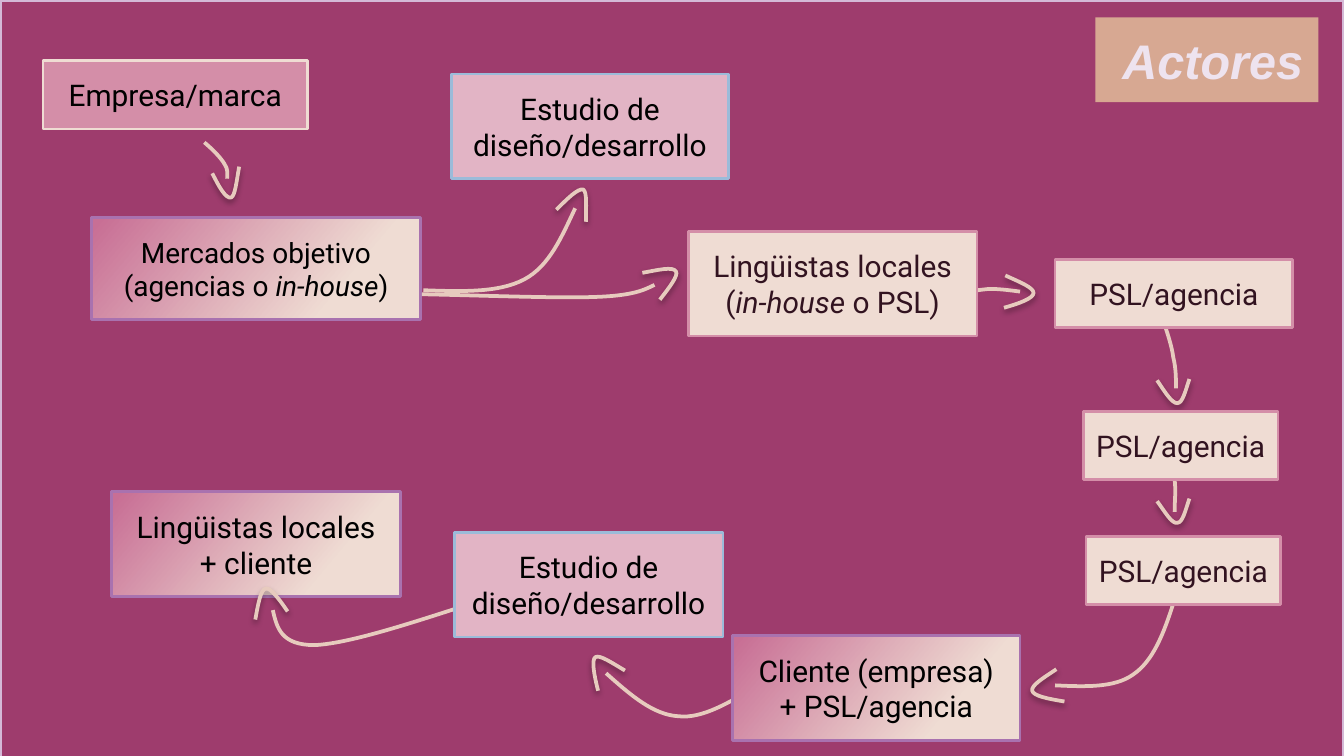
from copy import deepcopy

from lxml import etree
from pptx import Presentation
from pptx.dml.color import RGBColor
from pptx.enum.shapes import MSO_SHAPE
from pptx.enum.text import MSO_ANCHOR, MSO_AUTO_SIZE, PP_ALIGN
from pptx.oxml.ns import qn
from pptx.util import Pt

RECT = MSO_SHAPE.RECTANGLE
MIDDLE = MSO_ANCHOR.MIDDLE
GROW = MSO_AUTO_SIZE.SHAPE_TO_FIT_TEXT
CENTER = PP_ALIGN.CENTER
PX = 9144  # 100 px to the inch


class Theme:
    backdrop, panel, panel_line = "5A2337", "9E3C6D", "D4B9D7"
    arrow, shadow = "E7CBBE", "000000"
    badge, badge_text = "D7A892", "EEE3EF"
    body_font, badge_font = "Roboto", "Arial"
    body, small, badge_size = 16, 15, 26
    box_line, thick_line = 1.5, 2
    # kind: (fill, line, text); a pair of fill colours is a gradient
    boxes = {
        "brand": ("D48EA8", "EFDCD3", "000000"),
        "client": (("EFDCD3", "C86F95"), "A972AF", "000000"),
        "studio": ("E2B4C5", "9BBBD9", "000000"),
        "vendor": ("EFDCD3", "D48EA8", "321320"),
    }


# Boxes: kind, (left, top, width, height), side inset, wrap, size, paragraphs of runs
# "\n" is a line break; a run in a tuple is italic
BACK_BOXES = [
    ("client", (68, 162, 245, 76), 6, True, Theme.small,
     [["Mercados objetivo"], ["(agencias o ", ("in-house",), ")"]]),
    ("studio", (336, 55, 206, 78), 6, True, Theme.body,
     [["Estudio de diseño/desarrollo"]]),
    ("client", (83, 366, 215, 78), 12, False, Theme.body,
     [["Lingüistas locales"], ["+ cliente"]]),
]
FRONT_BOXES = [
    ("client", (545, 473, 214, 78), 12, False, Theme.body,
     [["Cliente (empresa)", "\n", "+ PSL/agencia"]]),
    ("studio", (338, 396, 200, 78), 6, False, Theme.body,
     [["Estudio de", "\n", "diseño/desarrollo"]]),
    ("brand", (32, 45, 197, 51), 6, True, Theme.body, [["Empresa/marca"]]),
    ("vendor", (512, 172, 215, 78), 12, True, Theme.body,
     [["Lingüistas locales", "\n", "(", ("in-house",), " o PSL)"]]),
    ("vendor", (785, 193, 177, 51), 6, True, Theme.body, [["PSL/agencia"]]),
    ("vendor", (806, 306, 145, 51), 6, False, Theme.body, [["PSL/agencia"]]),
    ("vendor", (808, 399, 145, 51), 6, False, Theme.body, [["PSL/agencia"]]),
]

# Curves: a start point, then three points for each Bézier segment
HEADS = [
    [(445, 514), (442, 502), (440, 491), (443, 489), (446, 487), (455, 493), (465, 499)],
    [(885, 282), (882, 291), (880, 300), (876, 300), (872, 300), (867, 292), (861, 283)],
    [(748, 205), (759, 210), (769, 214), (769, 218), (769, 222), (758, 226), (747, 229)],
    [(414, 156), (422, 148), (430, 140), (434, 141), (437, 143), (436, 154), (436, 165)],
    [(478, 203), (489, 201), (501, 198), (503, 202), (505, 205), (498, 214), (491, 223)],
    [(190, 461), (192, 450), (194, 438), (198, 438), (201, 437), (208, 446), (214, 455)],
    [(178, 124), (176, 135), (175, 146), (172, 147), (168, 148), (163, 139), (158, 129)],
    [(885, 371), (882, 380), (880, 389), (876, 389), (872, 390), (867, 381), (861, 373)],
    [(792, 522), (780, 520), (769, 518), (768, 514), (767, 510), (777, 504), (786, 498)],
]
SHAFTS = [
    [(315, 216), (343, 217), (371, 218), (390, 208), (409, 198), (418, 176), (428, 155)],
    [(314, 219), (364, 220), (414, 222), (443, 221), (471, 220), (479, 216), (487, 212)],
    [(203, 454), (206, 467), (209, 480), (234, 480), (259, 479), (305, 464), (351, 449)],
    [(785, 510), (807, 511), (829, 512), (843, 502), (858, 492), (866, 471), (873, 449)],
    [(451, 501), (469, 517), (486, 532), (505, 533), (523, 535), (544, 522), (564, 510)],
    [(152, 106), (158, 111), (164, 117), (167, 122), (170, 126), (169, 130), (169, 133)],
    [(709, 219), (718, 217), (727, 216), (736, 215), (744, 215), (751, 216), (759, 217)],
    [(866, 240), (869, 249), (872, 258), (873, 266), (875, 274), (875, 282), (875, 289)],
    [(870, 331), (872, 340), (873, 349), (874, 357), (875, 365), (874, 373), (874, 381)],
]


def rgb(value):
    return RGBColor.from_string(value)


def add_rect(slide, at, fill, line=None, width=Theme.box_line):
    sp = slide.shapes.add_shape(RECT, *(v * PX for v in at))
    sp.shadow.inherit = False
    if isinstance(fill, tuple):
        sp.fill.gradient()
        sp.fill.gradient_angle = 140
        for stop, color, pos in zip(sp.fill.gradient_stops, fill, (0.25, 0.98)):
            stop.color.rgb, stop.position = rgb(color), pos
    else:
        sp.fill.solid()
        sp.fill.fore_color.rgb = rgb(fill)
    if line:
        sp.line.color.rgb = rgb(line)
        sp.line.width = Pt(width)
    else:
        sp.line.fill.background()
    return sp


def set_insets(tf, side, end):
    tf.margin_left = tf.margin_right = side * PX
    tf.margin_top = tf.margin_bottom = end * PX
    tf.vertical_anchor = MIDDLE


def add_run(p, text, font, size, color, italic=False, bold=False):
    r = p.add_run()
    r.text = text
    r.font.name, r.font.size = font, Pt(size)
    r.font.color.rgb = rgb(color)
    r.font.italic, r.font.bold = italic, bold
    return r


def add_box(slide, kind, at, inset, wrap, size, paragraphs):
    fill, line, color = Theme.boxes[kind]
    tf = add_rect(slide, at, fill, line).text_frame
    set_insets(tf, inset, 12)
    tf.word_wrap, tf.auto_size = wrap, GROW
    for i, runs in enumerate(paragraphs):
        p = tf.add_paragraph() if i else tf.paragraphs[0]
        p.alignment = CENTER
        for run in runs:
            if run == "\n":
                # The break takes the type size of the run before it
                p.add_line_break()
                p._p[-1].append(deepcopy(r._r.rPr))
                continue
            italic = isinstance(run, tuple)
            r = add_run(p, run[0] if italic else run, Theme.body_font, size, color, italic)


def add_curve(slide, points, shadow=False):
    builder = slide.shapes.build_freeform(*points[0], scale=PX)
    builder.add_line_segments(points[1:], close=False)
    sp = builder.convert_to_shape()
    # Join each three line points into one Bézier segment
    path = next(sp._element.iter(qn("a:path")))
    steps = path.findall(qn("a:lnTo"))
    for i in range(0, len(steps), 3):
        bezier = etree.SubElement(path, qn("a:cubicBezTo"))
        for step in steps[i:i + 3]:
            bezier.append(step[0])
            path.remove(step)
    sp.fill.background()
    sp.line.color.rgb = rgb(Theme.arrow)
    sp.line.width = Pt(Theme.thick_line)
    sp.shadow.inherit = False
    if shadow:
        effects = sp._element.spPr.find(qn("a:effectLst"))
        outer = etree.SubElement(effects, qn("a:outerShdw"), blurRad="40000",
                                 dist="23000", dir="5400000", rotWithShape="0")
        color = etree.SubElement(outer, qn("a:srgbClr"), val=Theme.shadow)
        etree.SubElement(color, qn("a:alpha"), val="35000")


def add_badge(slide):
    tf = add_rect(slide, (815, 13, 166, 63), Theme.badge).text_frame
    set_insets(tf, 0, 0)
    tf.word_wrap = True
    p = tf.paragraphs[0]
    p.alignment = CENTER
    pPr = p._p.get_or_add_pPr()
    pPr.set("marL", str(10 * PX))
    pPr.set("indent", str(-PX))
    add_run(p, "Actores", Theme.badge_font, Theme.badge_size, Theme.badge_text, True, True)


def main():
    prs = Presentation()
    prs.slide_width, prs.slide_height = 1000 * PX, int(562.5 * PX)
    slide = prs.slides.add_slide(prs.slide_layouts[6])
    # Background
    slide.background.fill.solid()
    slide.background.fill.fore_color.rgb = rgb(Theme.backdrop)
    add_rect(slide, (0, 0, 1000, 645), Theme.panel, Theme.panel_line, Theme.thick_line)
    # Flow: arrows run between the back and front boxes
    for box in BACK_BOXES:
        add_box(slide, *box)
    for points in HEADS:
        add_curve(slide, points, shadow=True)
    for points in SHAFTS:
        add_curve(slide, points)
    for box in FRONT_BOXES:
        add_box(slide, *box)
    add_badge(slide)
    prs.save("out.pptx")


if __name__ == "__main__":
    main()
